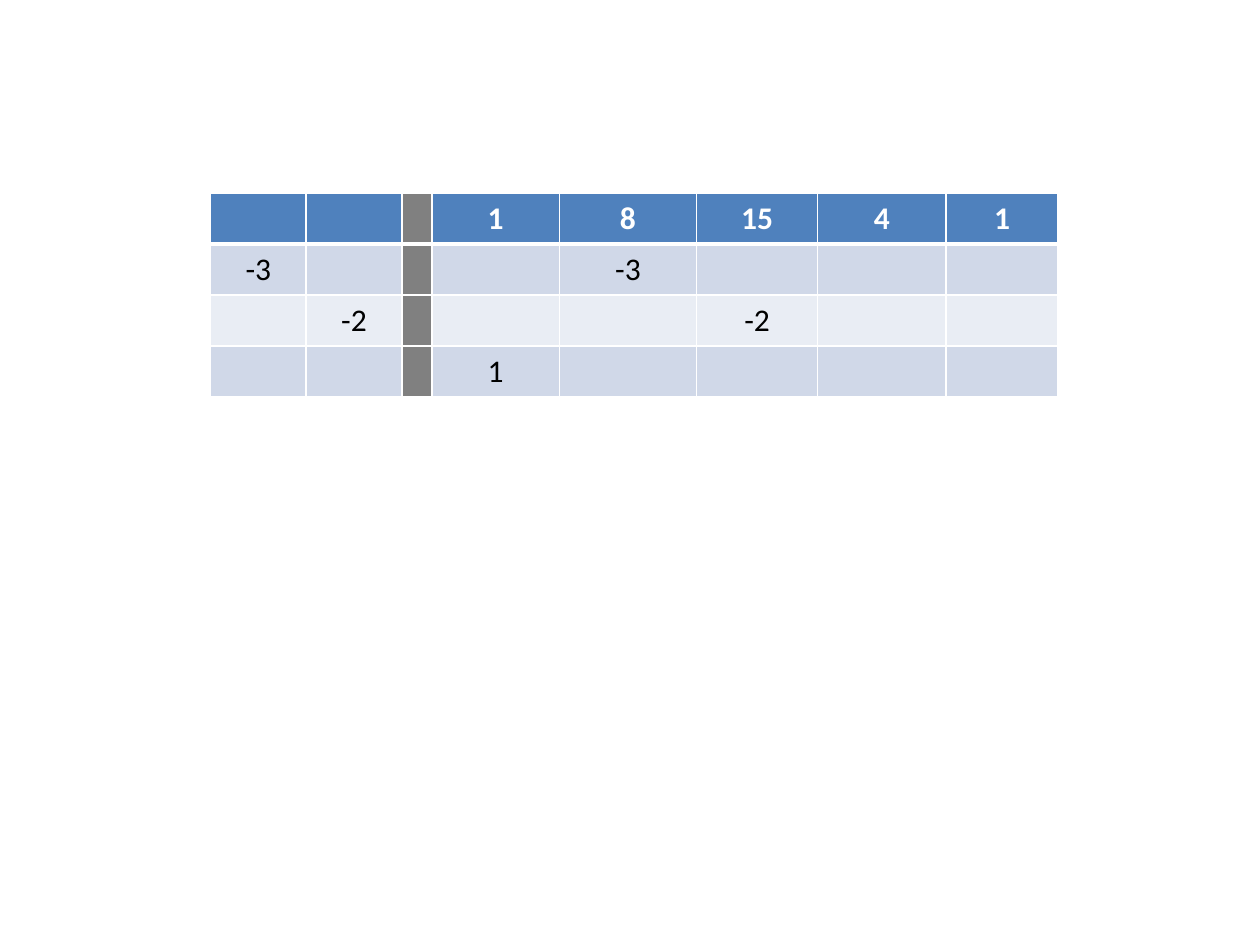
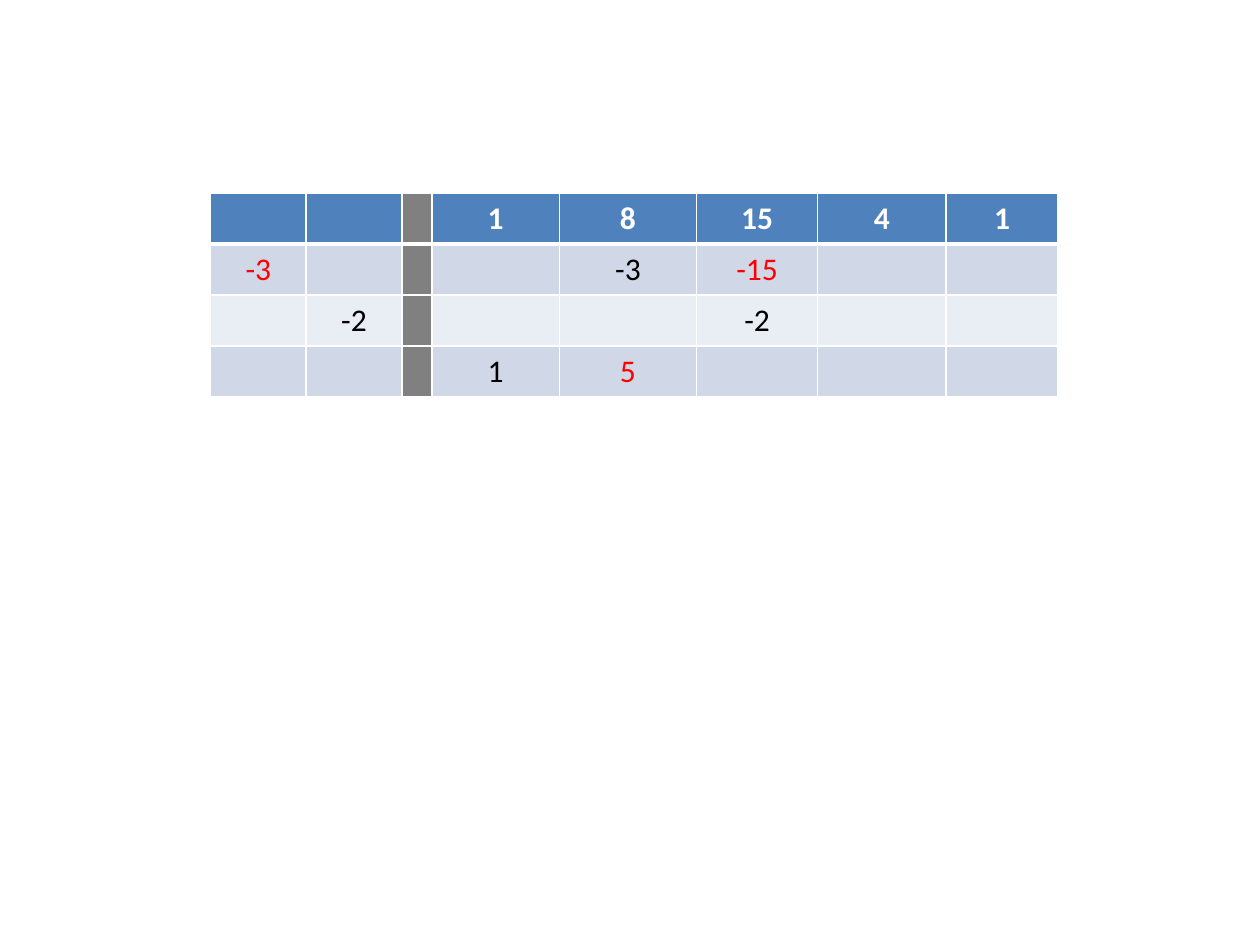
from lxml import etree
from pptx import Presentation
from pptx.dml.color import RGBColor
from pptx.enum.text import PP_ALIGN
from pptx.oxml.ns import qn
from pptx.util import Inches, Pt

CENTER = PP_ALIGN.CENTER
BLANK_LAYOUT = 6

COLORS = {
    "header": "4F81BD",
    "divider": "808080",
    "odd_row": "D0D8E8",
    "even_row": "E9EDF4",
    "border": "FFFFFF",
    "header_text": "FFFFFF",
    "text": "000000",
    "new_value": "FF0000",
}
FONT, FONT_SIZE = "Calibri", Pt(18)

# Table grid, in inches
TABLE_LEFT, TABLE_TOP, TABLE_HEIGHT = 1.67, 1.53, 1.62
COLUMN_WIDTHS = [0.76, 0.76, 0.23, 1.01, 1.09, 0.96, 1.02, 0.89]
DIVIDER_COLUMN = 2
THIN, THICK = Pt(1), Pt(3)

# Division steps: {(row, column): value}
COEFFICIENTS = {(0, 3 + i): value for i, value in enumerate(["1", "8", "15", "4", "1"])}
START = COEFFICIENTS | {
    (1, 0): "-3", (1, 4): "-3",
    (2, 1): "-2", (2, 5): "-2",
    (3, 3): "1",
}
SECOND_STEP = START | {(1, 5): "-15", (3, 4): "5"}
# Each slide: its values and the cells shown in red
STEPS = [
    (START, set()),
    (SECOND_STEP, {(1, 0), (1, 5), (3, 4)}),
]


def rgb(name):
    return RGBColor.from_string(COLORS[name])


def set_borders(cell, row):
    """Draw the grid lines, with a thick rule under the header row."""
    widths = {
        "L": THIN,
        "R": THIN,
        "T": THICK if row == 1 else THIN,
        "B": THICK if row == 0 else THIN,
    }
    properties = cell._tc.get_or_add_tcPr()
    for side, width in widths.items():
        line = etree.SubElement(properties, qn(f"a:ln{side}"), w=str(width))
        fill = etree.SubElement(line, qn("a:solidFill"))
        etree.SubElement(fill, qn("a:srgbClr"), val=COLORS["border"])


def fill_name(row, column):
    if column == DIVIDER_COLUMN:
        return "divider"
    if row == 0:
        return "header"
    return "odd_row" if row % 2 else "even_row"


def format_cell(cell, row, column, value, is_new):
    set_borders(cell, row)
    cell.fill.solid()
    cell.fill.fore_color.rgb = rgb(fill_name(row, column))
    cell.text = value
    para = cell.text_frame.paragraphs[0]
    para.alignment = CENTER
    para.font.name = FONT
    para.font.size = FONT_SIZE
    para.font.bold = row == 0
    color = "header_text" if row == 0 else "new_value" if is_new else "text"
    para.font.color.rgb = rgb(color)


def add_division_table(page, values, new_cells):
    rows, columns = 4, len(COLUMN_WIDTHS)
    table = page.shapes.add_table(
        rows, columns, Inches(TABLE_LEFT), Inches(TABLE_TOP),
        Inches(sum(COLUMN_WIDTHS)), Inches(TABLE_HEIGHT),
    ).table
    for column, width in zip(table.columns, COLUMN_WIDTHS):
        column.width = Inches(width)
    for row in range(rows):
        for column in range(columns):
            place = (row, column)
            format_cell(table.cell(row, column), row, column,
                        values.get(place, ""), place in new_cells)


def main():
    deck = Presentation()
    deck.slide_width, deck.slide_height = Inches(10), Inches(7.5)
    for values, new_cells in STEPS:
        page = deck.slides.add_slide(deck.slide_layouts[BLANK_LAYOUT])
        add_division_table(page, values, new_cells)
    deck.save("out.pptx")


if __name__ == "__main__":
    main()
